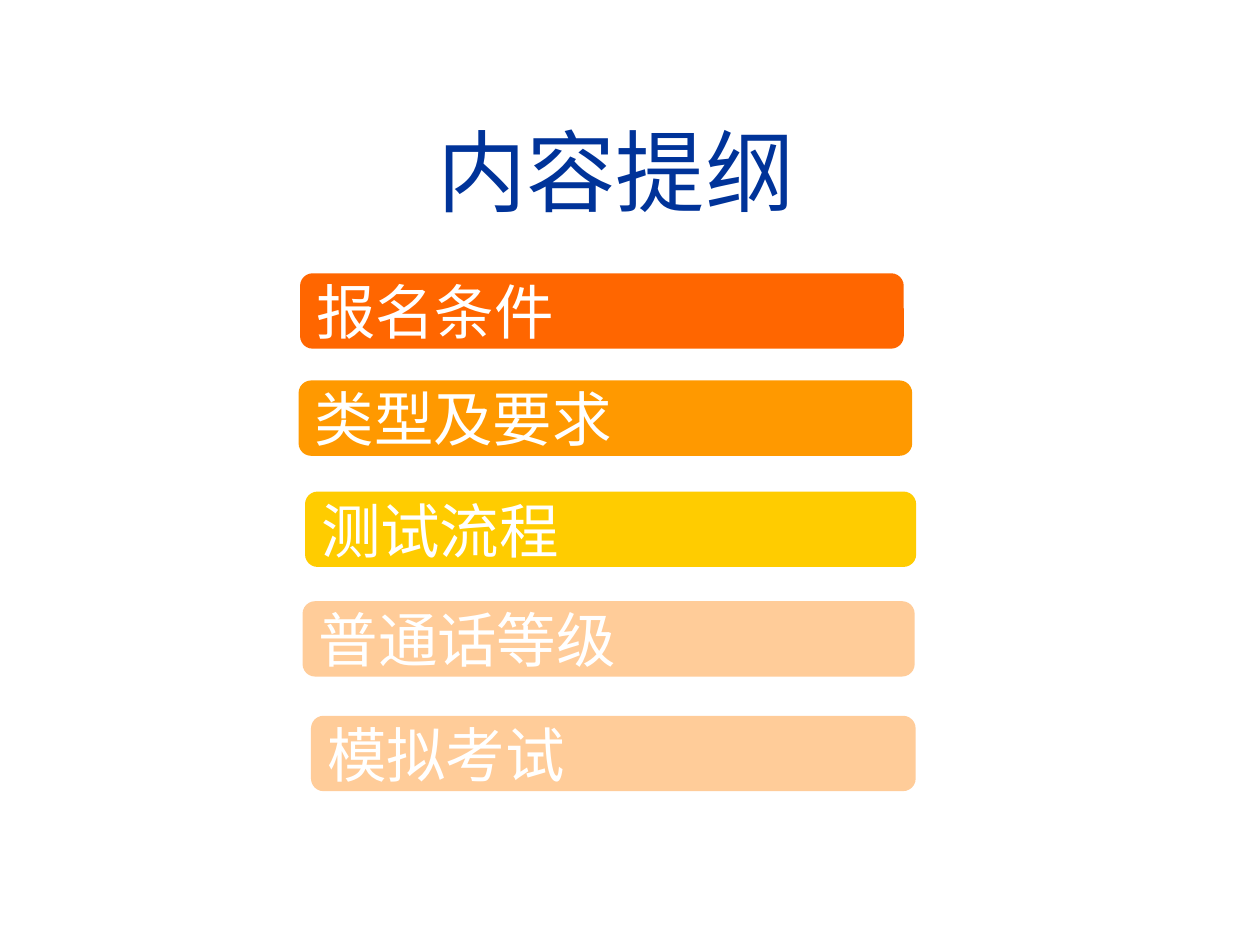
from pptx import Presentation, util as u
from pptx.dml.color import RGBColor
from pptx.enum import shapes, text

COLORS = {
    "title": "003399", "label": "FFFFFF", "orange": "FF6600",
    "amber": "FF9900", "yellow": "FFCC00", "peach": "FFCC99",
}
TITLE_FORMAT = {"name": "Arial", "size": u.Pt(51)}
LABEL_FORMAT = {"name": "Times New Roman", "size": u.Pt(34)}

# Label, fill, then left, top and width in cm within the agenda box
BARS = [
    ("报名条件", "orange", 0.03, 0, 12.17),
    ("类型及要求", "amber", 0, 2.16, 12.37),
    ("测试流程", "yellow", 0.13, 4.4, 12.32),
    ("普通话等级", "peach", 0.08, 6.61, 12.34),
    ("模拟考试", "peach", 0.25, 8.92, 12.19),
]
BAR_HEIGHT = 1.52


def rgb(key):
    return RGBColor.from_string(COLORS[key])


def write(sp, words, color, formats, align):
    tf = sp.text_frame
    tf.word_wrap = True
    tf.vertical_anchor = text.MSO_ANCHOR.MIDDLE
    p = tf.paragraphs[0]
    p.alignment = align
    r = p.add_run()
    r.text = words
    for name, value in formats.items():
        setattr(r.font, name, value)
    r.font.color.rgb = rgb(color)


def add_title(s, left, top, width, height):
    sp = s.shapes.add_textbox(u.Cm(left), u.Cm(top), u.Cm(width), u.Cm(height))
    write(sp, "内容提纲", "title", TITLE_FORMAT, text.PP_ALIGN.CENTER)


def add_agenda(s, left, top):
    for words, fill, dx, dy, width in BARS:
        sp = s.shapes.add_shape(
            shapes.MSO_SHAPE.ROUNDED_RECTANGLE,
            u.Cm(left + dx), u.Cm(top + dy), u.Cm(width), u.Cm(BAR_HEIGHT))
        sp.shadow.inherit = False
        sp.fill.solid()
        sp.fill.fore_color.rgb = rgb(fill)
        sp.line.fill.background()
        write(sp, words, "label", LABEL_FORMAT, text.PP_ALIGN.LEFT)


def main():
    prs = Presentation()
    prs.slide_width, prs.slide_height = u.Cm(25.4), u.Cm(19.05)
    s = prs.slides.add_slide(prs.slide_layouts[6])

    # Heading
    add_title(s, 1.3, 1.73, 22.23, 3.38)
    # Agenda bars
    add_agenda(s, 6.02, 5.51)

    prs.save("out.pptx")


if __name__ == "__main__":
    main()
